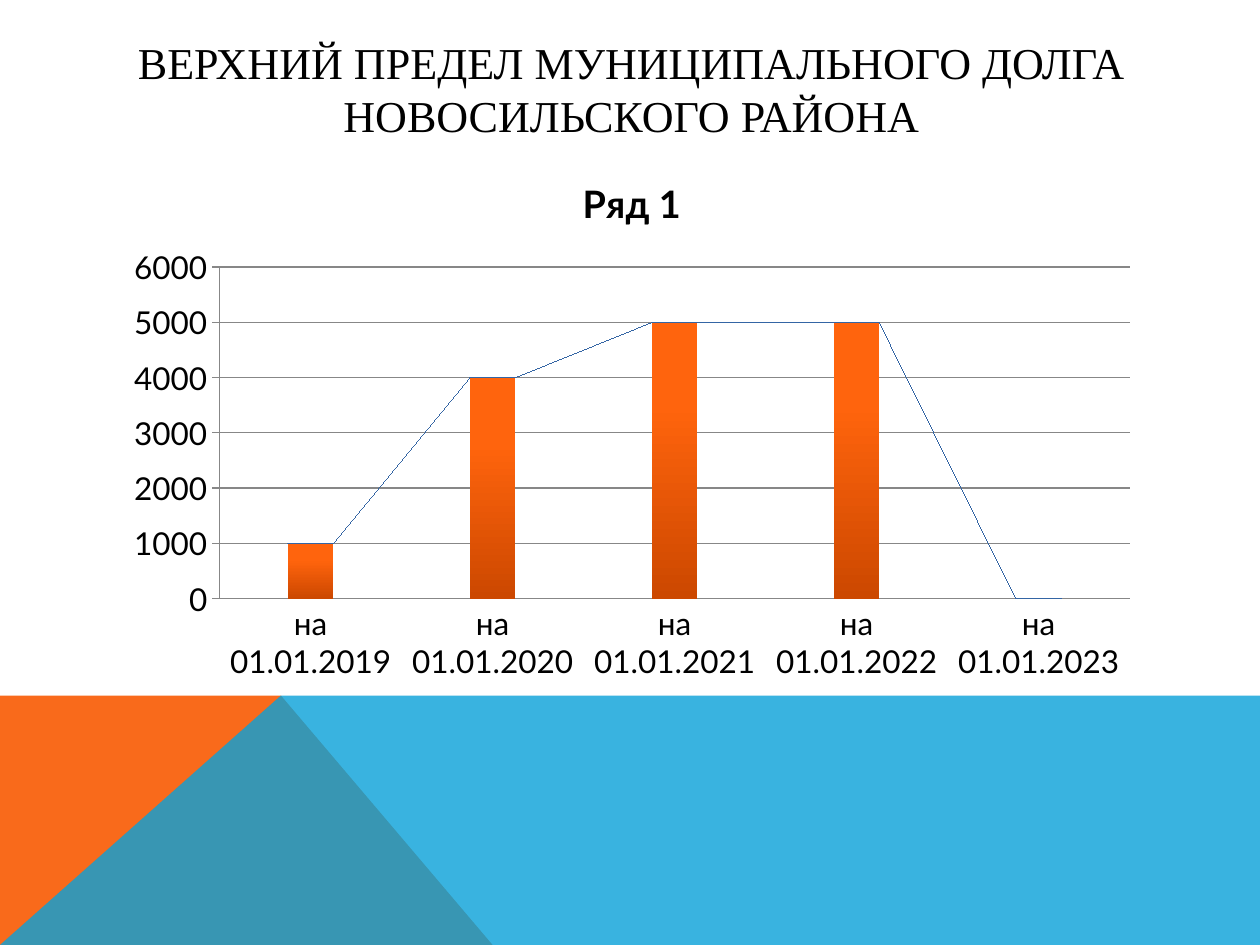
from lxml import etree
from pptx import Presentation
from pptx.chart.data import CategoryChartData
from pptx.dml.color import RGBColor
from pptx.enum.chart import XL_CHART_TYPE, XL_TICK_MARK
from pptx.enum.text import MSO_ANCHOR, PP_ALIGN
from pptx.oxml import parse_xml
from pptx.oxml.ns import nsdecls, qn
from pptx.util import Inches, Pt

STACKED = XL_CHART_TYPE.COLUMN_STACKED
TICK_NONE, TICK_OUT = XL_TICK_MARK.NONE, XL_TICK_MARK.OUTSIDE
MIDDLE, CENTER = MSO_ANCHOR.MIDDLE, PP_ALIGN.CENTER


def rgb(value):
    return RGBColor.from_string(value)


class SlideBuilder:
    BLACK, GREY, BLUE = "000000", "878787", "3465A4"
    ORANGE, SKY = "F96A1B", "08A1D9"
    BAR_TOP, BAR_BOTTOM = "FF640D", "CC4800"
    HEAD_FONT, BODY_FONT = "Times New Roman", "Lato"

    def __init__(self, prs):
        self.s = prs.slides.add_slide(prs.slide_layouts[6])

    def set_font(self, font, color=BLACK, **formats):
        for name, value in formats.items():
            setattr(font, name, value)
        font.color.rgb = rgb(color)

    def polygon(self, points, color, alpha=None):
        points = [(Inches(x), Inches(y)) for x, y in points]
        builder = self.s.shapes.build_freeform(*points[0])
        builder.add_line_segments(points[1:], close=True)
        sp = builder.convert_to_shape()
        sp.shadow.inherit = False
        sp.fill.solid()
        sp.fill.fore_color.rgb = rgb(color)
        sp.line.fill.background()
        if alpha:
            clr = sp.fill._xPr.find(".//" + qn("a:srgbClr"))
            etree.SubElement(clr, qn("a:alpha"), val=str(alpha * 1000))

    def title(self, text, box):
        tf = self.s.shapes.add_textbox(*map(Inches, box)).text_frame
        for name, value in {"word_wrap": True, "vertical_anchor": MIDDLE}.items():
            setattr(tf, name, value)
        p = tf.paragraphs[0]
        p.alignment = CENTER
        r = p.add_run()
        r.text = text
        self.set_font(r.font, name=self.HEAD_FONT, size=Pt(25.2))

    def column_chart(self, name, values, box):
        data = CategoryChartData()
        data.categories = list(values)
        data.add_series(name, values.values())
        chart = self.s.shapes.add_chart(STACKED, *map(Inches, box), data).chart
        self.set_font(chart.font, name=self.BODY_FONT, size=Pt(18))
        chart.has_legend = False
        chart.has_title = True
        p = chart.chart_title.text_frame.paragraphs[0]
        r = p.add_run()
        r.text = name
        self.set_font(r.font, name=self.BODY_FONT, size=Pt(21.6), bold=True)
        chart.chart_title.include_in_layout = False

        cat, val = chart.category_axis, chart.value_axis
        for axis, tick in ((cat, TICK_NONE), (val, TICK_OUT)):
            axis.major_tick_mark = tick
            axis.minor_tick_mark = TICK_NONE
            axis.format.line.color.rgb = rgb(self.GREY)
        val.major_gridlines.format.line.color.rgb = rgb(self.GREY)
        val.minimum_scale, val.maximum_scale, val.major_unit = 0, 6000, 1000

        plot = chart.plots[0]
        plot.gap_width, plot.overlap = 300, 100
        plot.vary_by_categories = False
        fill = plot.series[0].format.fill
        fill.gradient()
        fill.gradient_angle = 270
        for stop, color in zip(fill.gradient_stops, (self.BAR_TOP, self.BAR_BOTTOM)):
            stop.color.rgb = rgb(color)
        for stop, position in zip(fill.gradient_stops, (0.3, 1)):
            stop.position = position
        self.series_lines(plot)

    def series_lines(self, plot):
        lines = parse_xml(
            f'<c:serLines {nsdecls("c", "a")}><c:spPr><a:ln w="9525"><a:solidFill>'
            f'<a:srgbClr val="{self.BLUE}"/></a:solidFill></a:ln></c:spPr></c:serLines>'
        )
        plot._element.find(qn("c:overlap")).addnext(lines)


def main():
    prs = Presentation()
    prs.slide_width, prs.slide_height = Inches(10), Inches(7.5)
    slide = SlideBuilder(prs)
    top, bottom, peak = 5.52, 7.5, 2.23
    slide.polygon([(0, bottom), (0, top), (peak, top), (3.91, bottom)], slide.ORANGE)
    slide.polygon([(0, bottom), (peak, top), (10, top), (10, bottom)], slide.SKY, 80)
    slide.title("ВЕРХНИЙ ПРЕДЕЛ МУНИЦИПАЛЬНОГО ДОЛГА НОВОСИЛЬСКОГО РАЙОНА",
                (0.9, 0.4, 8.22, 0.6))
    debt = (1000, 4000, 5000, 5000, 0)
    values = {f"на 01.01.{year}": v for year, v in enumerate(debt, 2019)}
    slide.column_chart("Ряд 1", values, (0.9, 1.2, 8.23, 4.28))
    prs.save("out.pptx")


if __name__ == "__main__":
    main()
